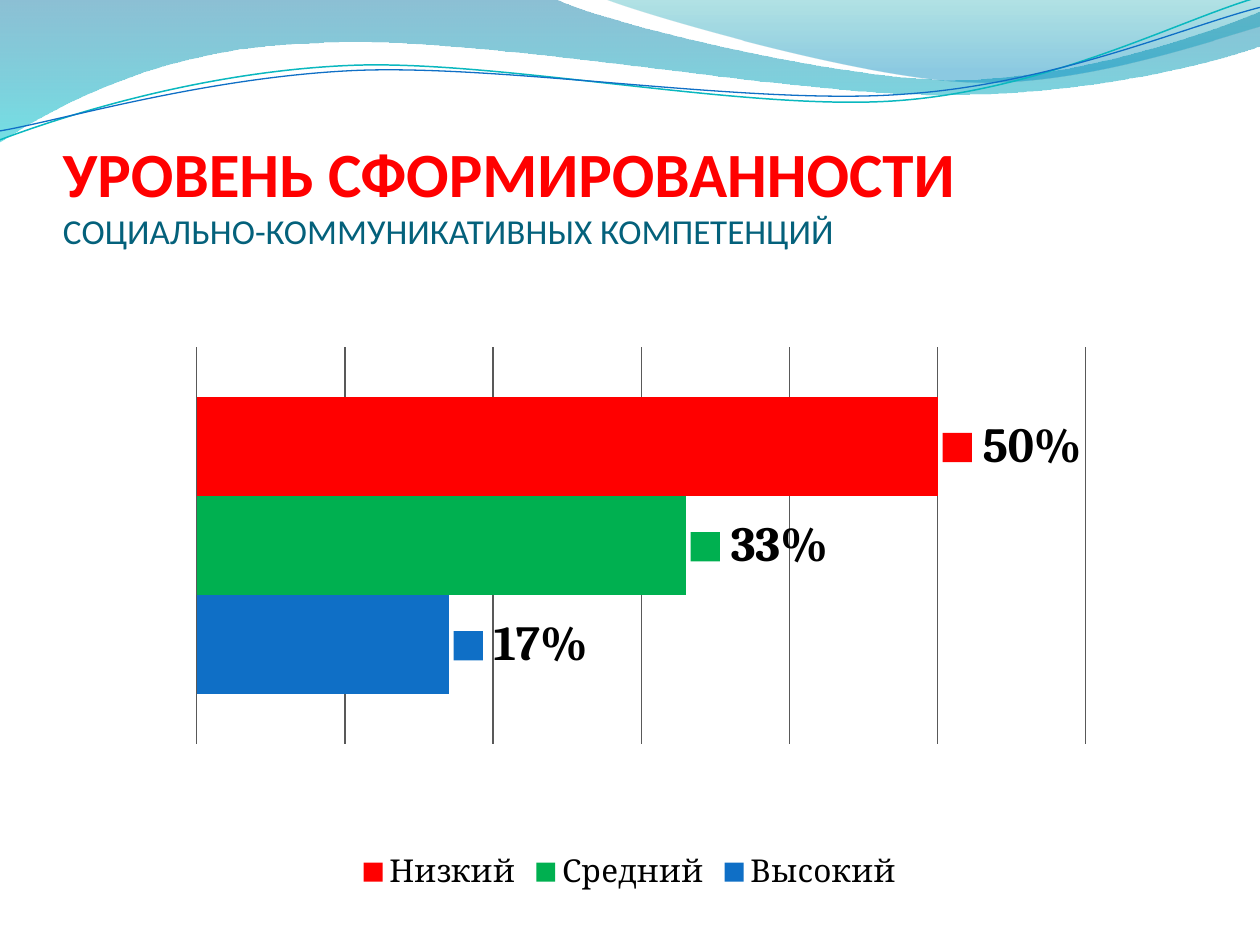
import lxml.etree
import pptx
import pptx.chart.data
import pptx.dml.color
import pptx.enum.chart
import pptx.enum.text
import pptx.oxml
import pptx.oxml.ns
import pptx.util

Cm = pptx.util.Cm
Pt = pptx.util.Pt
RGB = pptx.dml.color.RGBColor
qn = pptx.oxml.ns.qn

RED = RGB(0xFF, 0x00, 0x00)
GREEN = RGB(0x00, 0xB0, 0x50)
BLUE = RGB(0x0F, 0x6F, 0xC6)
TEAL = RGB(0x0A, 0xB8, 0xBF)
NAVY = RGB(0x04, 0x61, 0x7B)
DEEP = RGB(0x00, 0x74, 0xA1)
CYAN = RGB(0x00, 0xC6, 0xCF)
SEA = RGB(0x00, 0xA1, 0xA9)
SKY = RGB(0x00, 0x8B, 0xBF)
BLACK = RGB(0x00, 0x00, 0x00)
GREY = RGB(0x59, 0x59, 0x59)

WIDE = [(0, 0), (11.18, -0.03), (12.09, 0.43, 16.87, 1.6, 19.25, 1.6),
        (21.67, 1.6, 24.33, 0.66, 25.4, 0.23), (25.43, 0.91),
        (24.97, 1.12, 22.1, 1.93, 18.95, 1.91),
        (15.8, 1.91, 9.7, 0.71, 6.53, 0.86),
        (3.28, 0.91, 1.17, 2.11, -0.03, 2.87)]
SLIM = [(12.17, -0.03), (12.93, 0.28, 17.32, 1.57, 19.53, 1.65),
        (21.74, 1.75, 24.41, 0.81, 25.4, 0.53), (25.4, 0)]
UPPER = [(0, 2.82), (1.22, 2.36, 4.01, 1.45, 7.04, 1.32),
         (10.03, 1.19, 15.06, 2.26, 18.11, 2.03),
         (21.16, 1.8, 23.83, 0.38, 25.35, -0.05)]
LOWER = [(0, 2.64), (1.19, 2.44, 4.17, 1.55, 7.19, 1.42),
         (10.24, 1.3, 15.16, 2.13, 18.21, 1.9),
         (21.23, 1.7, 23.9, 0.53, 25.4, 0.15)]

LEVELS = [("Высокий", 0.17, BLUE), ("Средний", 0.33, GREEN), ("Низкий", 0.5, RED)]


def bend(shape, parts):
    lines = list(shape._element.iter(qn("a:lnTo")))
    for part in parts[1:]:
        if len(part) == 2:
            lines.pop(0)
            continue
        first, second, third = lines[:3]
        del lines[:3]
        curve = lxml.etree.Element(qn("a:cubicBezTo"))
        first.addprevious(curve)
        for line in (first, second, third):
            curve.append(line[0])
            line.getparent().remove(line)


def add_curve(slide, parts, close):
    points = [(Cm(part[i]), Cm(part[i + 1]))
              for part in parts for i in range(0, len(part), 2)]
    pen = slide.shapes.build_freeform(*points[0])
    pen.add_line_segments(points[1:], close=close)
    shape = pen.convert_to_shape()
    shape.shadow.inherit = False
    bend(shape, parts)
    return shape


def add_wave(slide, parts, stops):
    shape = add_curve(slide, parts, True)
    shape.line.fill.background()
    shape.fill.gradient()
    shape.fill.gradient_angle = 270
    for stop, (place, color, alpha) in zip(shape.fill.gradient_stops, stops):
        stop.position = place
        stop.color.rgb = color
    tags = shape.fill._xPr.iter(qn("a:srgbClr"))
    for tag, (place, color, alpha) in zip(tags, stops):
        lxml.etree.SubElement(tag, qn("a:alpha")).set("val", str(alpha * 1000))


def add_line(slide, parts, color, width):
    shape = add_curve(slide, parts, False)
    shape.fill.background()
    shape.line.color.rgb = color
    shape.line.width = Pt(width)


def set_font(font, size, color=BLACK, name="Cambria", bold=False):
    font.size = Pt(size)
    font.name = name
    font.bold = bold
    font.color.rgb = color


def add_text(para, text, **style):
    run = para.add_run()
    run.text = text
    set_font(run.font, **style)


def add_title(slide):
    box = slide.shapes.add_textbox(Cm(1.27), Cm(1.9), Cm(22.86), Cm(3.18))
    frame = box.text_frame
    frame.word_wrap = True
    frame.vertical_anchor = pptx.enum.text.MSO_ANCHOR.BOTTOM
    frame.margin_left = frame.margin_right = frame.margin_bottom = 0
    para = frame.paragraphs[0]
    add_text(para, "УРОВЕНЬ СФОРМИРОВАННОСТИ ", size=36, color=RED, name="Calibri", bold=True)
    para.add_line_break()
    add_text(para, "СОЦИАЛЬНО-КОММУНИКАТИВНЫХ КОМПЕТЕНЦИЙ", size=20, color=NAVY, name="Calibri")


def place_plot(chart, **sides):
    area = chart._chartSpace.find(".//" + qn("c:plotArea"))
    for old in area.findall(qn("c:layout")):
        area.remove(old)
    layout = pptx.oxml.parse_xml(
        '<c:layout xmlns:c="http://schemas.openxmlformats.org/drawingml/2006/chart"/>')
    area.insert(0, layout)
    manual = lxml.etree.SubElement(layout, qn("c:manualLayout"))
    rules = {"layoutTarget": "inner", "xMode": "edge", "yMode": "edge"}
    rules.update({side: share / 100 for side, share in sides.items()})
    for name, value in rules.items():
        lxml.etree.SubElement(manual, qn("c:" + name)).set("val", str(value))


def style_bar(bar, color):
    bar.format.fill.solid()
    bar.format.fill.fore_color.rgb = color
    labels = bar.data_labels
    labels.show_value = True
    labels.show_legend_key = True
    labels.number_format = "0%"
    labels.number_format_is_linked = False
    labels.position = pptx.enum.chart.XL_LABEL_POSITION.OUTSIDE_END
    set_font(labels.font, 28, bold=True)


def add_bars(slide):
    data = pptx.chart.data.CategoryChartData(number_format="0%")
    data.categories = ["1"]
    for name, value, color in LEVELS:
        data.add_series(name, [value])
    kind = pptx.enum.chart.XL_CHART_TYPE.BAR_CLUSTERED
    frame = slide.shapes.add_chart(kind, Cm(1.27), Cm(5.51), Cm(22.86), Cm(12.57), data)
    chart = frame.chart
    set_font(chart.font, 18)
    chart.has_title = False
    chart.has_legend = True
    chart.legend.position = pptx.enum.chart.XL_LEGEND_POSITION.BOTTOM
    chart.legend.include_in_layout = True
    chart.category_axis.visible = False
    scale = chart.value_axis
    scale.visible = False
    scale.minimum_scale, scale.maximum_scale, scale.major_unit = 0, 0.6, 0.1
    scale.has_major_gridlines = True
    scale.major_gridlines.format.line.color.rgb = GREY
    scale.major_gridlines.format.line.width = Pt(0.75)
    plot = chart.plots[0]
    plot.gap_width = 100
    plot.vary_by_categories = False
    for bar, (name, value, color) in zip(plot.series, LEVELS):
        style_bar(bar, color)
    place_plot(chart, x=11.8, y=11.9, w=78.4, h=63.6)


def main():
    deck = pptx.Presentation()
    deck.slide_width, deck.slide_height = Cm(25.4), Cm(19.05)
    slide = deck.slides.add_slide(deck.slide_layouts[6])
    add_wave(slide, WIDE, [(0, DEEP, 45), (1, CYAN, 55)])
    add_wave(slide, SLIM, [(0, SEA, 30), (0.8, SKY, 45)])
    add_line(slide, UPPER, TEAL, 0.85)
    add_line(slide, LOWER, BLUE, 0.75)
    add_title(slide)
    add_bars(slide)
    deck.save("out.pptx")


if __name__ == "__main__":
    main()
